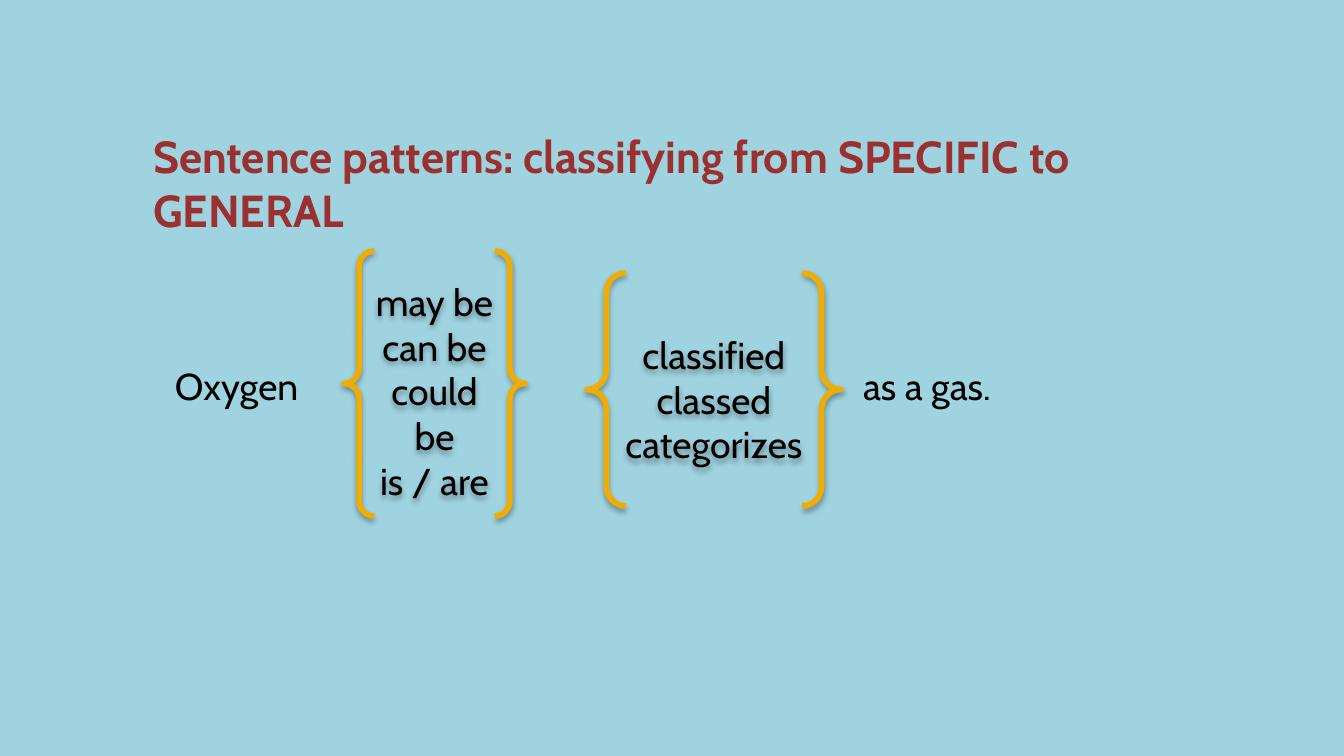
from lxml.etree import SubElement
from pptx import Presentation
from pptx.dml.color import RGBColor
from pptx.enum.shapes import MSO_SHAPE
from pptx.enum.text import MSO_ANCHOR, MSO_AUTO_SIZE, PP_ALIGN
from pptx.oxml.ns import qn
from pptx.util import Emu, Pt

SKY = RGBColor(0xA0, 0xD3, 0xE0)
RED = RGBColor(0x9A, 0x31, 0x30)
GOLD = RGBColor(0xF0, 0xAD, 0x00)
BLACK = RGBColor(0, 0, 0)

BODY = {"name": "Cabin", "size": Pt(20), "bold": False}
TITLE = {"name": "Cabin", "size": Pt(24), "bold": True}


def px(n):
    return Emu(round(n * 914400 / 134.4))


def set_attrs(obj, values):
    for name, value in values.items():
        setattr(obj, name, value)


def write_lines(tf, lines, font, color, align):
    set_attrs(tf, {
        "word_wrap": True,
        "margin_left": px(11), "margin_right": px(11),
        "margin_top": px(5), "margin_bottom": px(5),
    })
    for i, line in enumerate(lines):
        p = tf.paragraphs[0] if i == 0 else tf.add_paragraph()
        p.alignment = align
        r = p.add_run()
        r.text = line
        set_attrs(r.font, font)
        r.font.color.rgb = color


def add_label(s, box, text, font=BODY, color=BLACK):
    tf = s.shapes.add_textbox(*map(px, box)).text_frame
    write_lines(tf, [text], font, color, PP_ALIGN.LEFT)
    tf.auto_size = MSO_AUTO_SIZE.SHAPE_TO_FIT_TEXT


def add_shadow(sp):
    sp.shadow.inherit = False
    effects = sp._element.spPr.find(qn("a:effectLst"))
    shadow = SubElement(effects, qn("a:outerShdw"), {
        "blurRad": str(Pt(3.1)), "dist": str(Pt(1.8)),
        "dir": "5400000", "rotWithShape": "0",
    })
    color = SubElement(shadow, qn("a:srgbClr"), val=str(BLACK))
    SubElement(color, qn("a:alpha"), val="35000")


def add_choices(s, box, choices):
    sp = s.shapes.add_shape(MSO_SHAPE.DOUBLE_BRACE, *map(px, box))
    sp.fill.background()
    sp.line.color.rgb = GOLD
    sp.line.width = Pt(3)
    add_shadow(sp)
    write_lines(sp.text_frame, choices, BODY, BLACK, PP_ALIGN.CENTER)
    sp.text_frame.vertical_anchor = MSO_ANCHOR.MIDDLE


def main():
    prs = Presentation()
    set_attrs(prs, {"slide_width": px(1344), "slide_height": px(756)})
    s = prs.slides.add_slide(prs.slide_layouts[6])
    s.background.fill.solid()
    s.background.fill.fore_color.rgb = SKY

    add_label(s, (142, 124, 1132, 65),
              "Sentence patterns: classifying from SPECIFIC to GENERAL", TITLE, RED)
    add_label(s, (164, 358, 148, 55), "Oxygen")
    add_choices(s, (344, 251, 181, 265), ["may be", "can be", "could be", "is / are"])
    add_choices(s, (587, 273, 254, 233), ["classified", "classed", "categorizes"])
    add_label(s, (852, 358, 212, 55), "as a gas.")
    prs.save("out.pptx")


if __name__ == "__main__":
    main()
